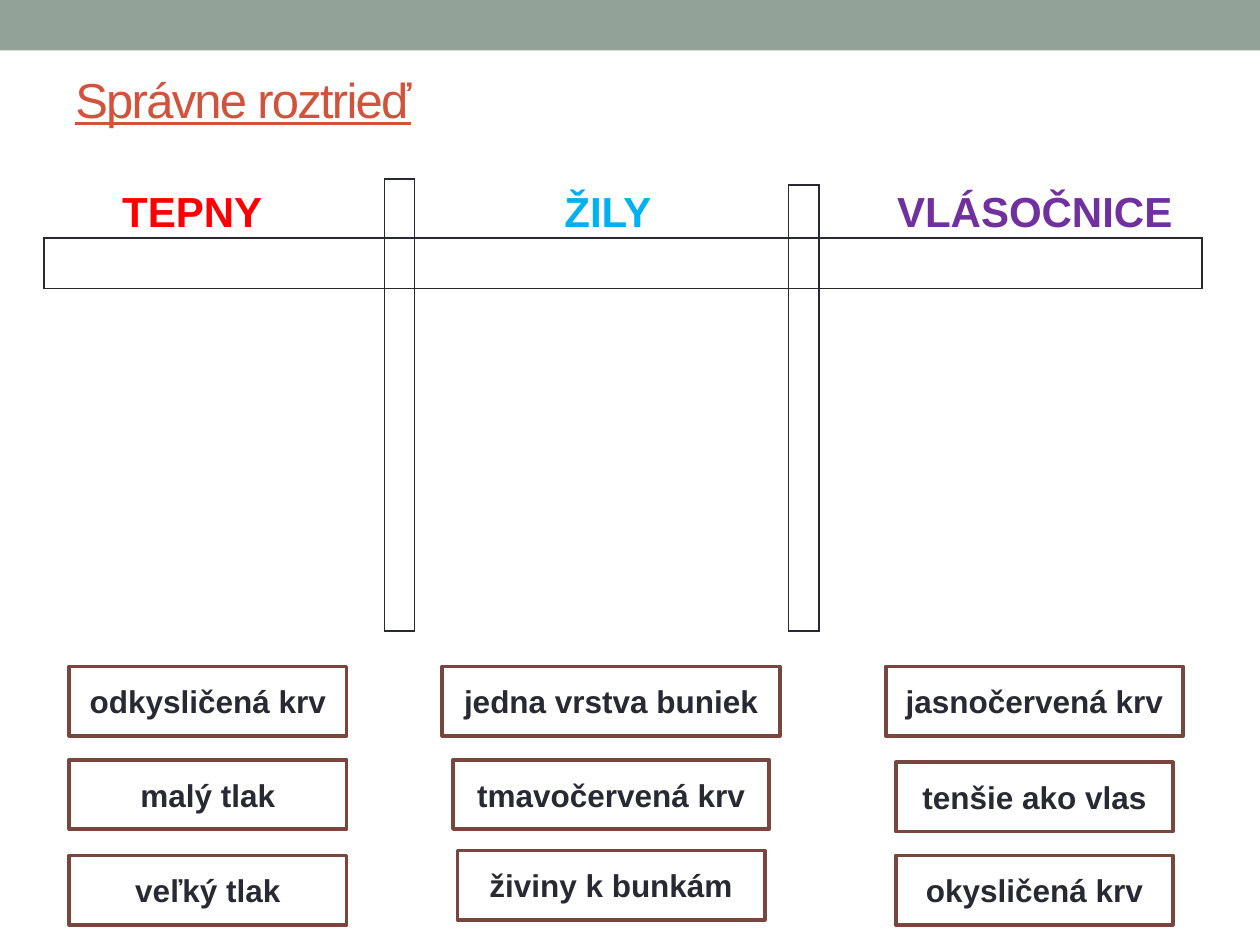
from lxml.etree import SubElement
from pptx import Presentation
from pptx.dml.color import RGBColor
from pptx.enum.shapes import MSO_SHAPE
from pptx.enum.text import MSO_ANCHOR, PP_ALIGN
from pptx.oxml.ns import qn
from pptx.util import Inches, Pt

INK, RUST = "292934", "79463D"
HEADS = [("TEPNY", "FF0000"), ("ŽILY", "00B0F0"), ("VLÁSOČNICE", "7030A0")]
BARS = [(30.5, 14.2, 2.3, 35.9), (62.6, 14.7, 2.4, 35.4), (3.5, 18.9, 91.9, 4)]
CARDS = [
    (16.5, [("odkysličená krv", 52.9, 22), ("malý tlak", 60.3, 22),
            ("veľký tlak", 67.9, 22)]),
    (48.5, [("jedna vrstva buniek", 52.9, 26.8), ("tmavočervená krv", 60.3, 25.1),
            ("živiny k bunkám", 67.5, 24.4)]),
    (82.1, [("jasnočervená krv", 52.9, 23.6), ("tenšie ako vlas", 60.5, 22),
            ("okysličená krv", 67.9, 22)]),
]


def tint(code):
    return RGBColor.from_string(code)


class Deck:
    """Draws on one slide laid out as a grid of 100 columns by 75 rows."""

    def __init__(self, font="Arial"):
        self.font = font
        self.show = Presentation()
        self.show.slide_width, self.show.slide_height = Inches(10), Inches(7.5)
        self.slide = self.show.slides.add_slide(self.show.slide_layouts[6])

    def place(self, *cells):
        return [round(cell * self.show.slide_width / 100) for cell in cells]

    def style(self, run, size, color, bold=False):
        run.font.name, run.font.size, run.font.bold = self.font, Pt(size), bold
        run.font.color.rgb = tint(color)

    def box(self, area, fill, edge=None):
        shape = self.slide.shapes.add_shape(MSO_SHAPE.RECTANGLE, *self.place(*area))
        shape.shadow.inherit = False
        shape.fill.solid()
        shape.fill.fore_color.rgb = tint(fill)
        if edge:
            shape.line.color.rgb, shape.line.width = tint(edge), Pt(2.08)
        else:
            shape.line.fill.background()
        return shape

    def card(self, text, area):
        frame = self.box(area, "FFFFFF", RUST).text_frame
        frame.word_wrap, frame.vertical_anchor = True, MSO_ANCHOR.MIDDLE
        frame.text = text
        para = frame.paragraphs[0]
        para.alignment = PP_ALIGN.CENTER
        self.style(para.runs[0], 18, INK, True)

    def text(self, area):
        frame = self.slide.shapes.add_textbox(*self.place(*area)).text_frame
        frame.word_wrap = True
        return frame

    def title(self, text, area):
        frame = self.text(area)
        frame.vertical_anchor = MSO_ANCHOR.MIDDLE
        frame.text = text
        run = frame.paragraphs[0].runs[0]
        self.style(run, 28, "D2533C")
        run.font.underline = True
        run.font._element.set("spc", "-100")

    def heads(self, items, area, inset, stops):
        frame = self.text(area)
        frame.margin_left, frame.margin_top = self.place(inset, 0.8)
        para = frame.paragraphs[0]
        tabs = SubElement(para._p.get_or_add_pPr(), qn("a:tabLst"))
        for stop in self.place(*stops):
            SubElement(tabs, qn("a:tab"), pos=str(stop), algn="l")
        for spot, (word, color) in enumerate(items):
            run = para.add_run()
            run.text = "\t" + word if spot else word
            self.style(run, 24, color, True)

    def bar(self, area):
        table = self.slide.shapes.add_table(1, 1, *self.place(*area)).table
        table.first_row = table.horz_banding = False
        cell = table.cell(0, 0)
        props = cell._tc.get_or_add_tcPr()
        for side in ("lnL", "lnR", "lnT", "lnB"):
            line = SubElement(props, qn("a:" + side), w=str(Pt(1)))
            fill = SubElement(line, qn("a:solidFill"))
            SubElement(fill, qn("a:srgbClr"), val=INK)
        cell.fill.background()


def main():
    deck = Deck()
    deck.box((0, 0, 100, 4), "93A299")
    deck.title("Správne roztrieď", (5, 5.8, 90, 4.1))
    deck.heads(HEADS, (5, 13.9, 90, 57), 4.7, (35.1, 61.5))
    for area in BARS:
        deck.bar(area)
    for mid, cards in CARDS:
        for text, top, width in cards:
            deck.card(text, (mid - width / 2, top, width, 5.5))
    deck.show.save("out.pptx")


if __name__ == "__main__":
    main()
